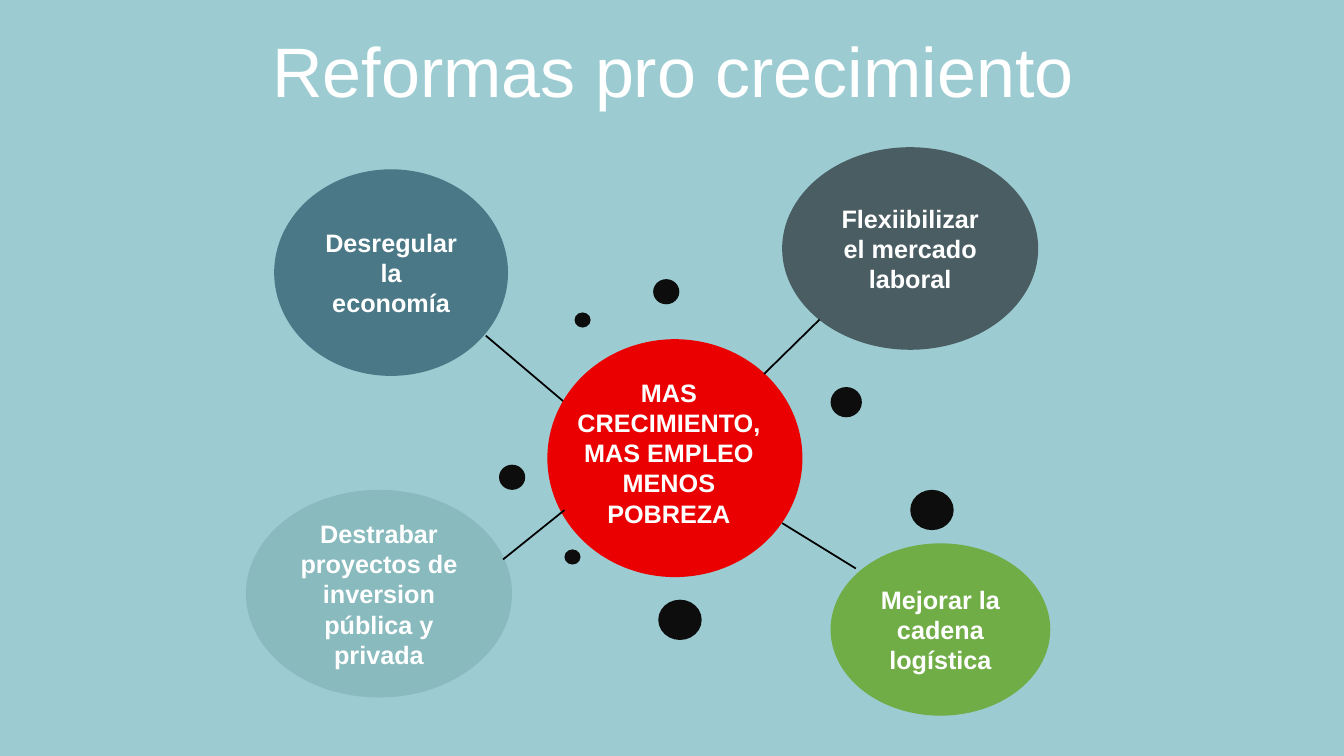
from dataclasses import dataclass
from typing import Optional

import pptx
import pptx.dml.color
import pptx.enum.shapes
import pptx.enum.text
import pptx.oxml
import pptx.util

SLIDE_WIDTH = pptx.util.Inches(13.33)
SLIDE_HEIGHT = pptx.util.Inches(7.5)


@dataclass(frozen=True)
class Theme:
    background: str = "9CCCD2"
    text: str = "FFFFFF"
    hub: str = "EA0000"
    deregulation: str = "4A7886"
    labour: str = "4A5D62"
    projects: str = "88BABE"
    logistics: str = "70AD47"
    dot: str = "0D0D0D"
    spoke: str = "000000"
    font: str = "Arial"
    title_size: float = 50
    label_size: float = 18
    spoke_width: float = 1.25


THEME = Theme()


@dataclass(frozen=True)
class Box:
    """Left, top, width and height in percent of the slide's size."""
    left: float
    top: float
    width: float
    height: float


@dataclass(frozen=True)
class Bubble:
    box: Box
    color: str
    label: Optional[str] = None


@dataclass(frozen=True)
class Spoke:
    """Start and end points in percent of the slide's size."""
    x1: float
    y1: float
    x2: float
    y2: float


@dataclass(frozen=True)
class Dot:
    left: float
    top: float
    size: tuple[float, float]


TITLE_BOX = Box(2.63, 4.93, 94.95, 10.53)
HUB_TEXT_BOX = Box(41.78, 49.2, 15.98, 22)
HUB = Bubble(Box(40.73, 44.87, 18.98, 31.47), THEME.hub)
REFORMS = [
    Bubble(Box(58.2, 19.47, 19.05, 26.8), THEME.labour, "Flexiibilizar el mercado laboral"),
    Bubble(Box(61.8, 71.87, 16.35, 22.8), THEME.logistics, "Mejorar la cadena logística"),
    Bubble(Box(20.4, 22.4, 17.4, 27.33), THEME.deregulation, "Desregular la economía"),
    Bubble(Box(18.3, 64.8, 19.8, 27.47), THEME.projects,
           "Destrabar proyectos de inversion pública y privada"),
]
SPOKE_BEHIND_HUB = Spoke(36.15, 44.4, 42.53, 54)
FRONT_SPOKES = [
    Spoke(37.43, 74, 42, 67.47),
    Spoke(56.85, 49.47, 60.98, 42.27),
    Spoke(58.2, 69.2, 63.68, 75.2),
]
LARGE, MEDIUM, SMALL, TINY = (3.23, 5.33), (2.33, 4), (1.95, 3.33), (1.2, 2)
DOTS = [
    Dot(48.98, 79.33, LARGE),
    Dot(61.8, 51.2, MEDIUM),
    Dot(42.75, 41.33, TINY),
    Dot(37.13, 61.47, SMALL),
    Dot(67.73, 64.8, LARGE),
    Dot(48.6, 36.93, SMALL),
    Dot(42, 72.67, TINY),
]


def across(percent: float) -> int:
    return round(SLIDE_WIDTH * percent / 100)


def down(percent: float) -> int:
    return round(SLIDE_HEIGHT * percent / 100)


def place(box: Box) -> tuple[int, int, int, int]:
    return across(box.left), down(box.top), across(box.width), down(box.height)


def rgb(color: str) -> pptx.dml.color.RGBColor:
    return pptx.dml.color.RGBColor.from_string(color)


def write(frame, text: str, size: float, bold: bool, anchor):
    """Fill a text frame with one centred paragraph and return the paragraph."""
    frame.word_wrap = True
    frame.vertical_anchor = anchor
    paragraph = frame.paragraphs[0]
    paragraph.alignment = pptx.enum.text.PP_ALIGN.CENTER
    run = paragraph.add_run()
    run.text = text
    run.font.name = THEME.font
    run.font.size = pptx.util.Pt(size)
    run.font.bold = bold
    run.font.color.rgb = rgb(THEME.text)
    return paragraph


def draw_title(slide) -> None:
    title = slide.shapes.add_textbox(*place(TITLE_BOX))
    paragraph = write(title.text_frame, "Reformas pro crecimiento", THEME.title_size,
                      False, pptx.enum.text.MSO_ANCHOR.MIDDLE)
    paragraph.line_spacing = 0.8
    paragraph.space_before = pptx.util.Pt(10)


def draw_bubble(slide, bubble: Bubble) -> None:
    ellipse = slide.shapes.add_shape(pptx.enum.shapes.MSO_SHAPE.OVAL, *place(bubble.box))
    ellipse.shadow.inherit = False
    ellipse.fill.solid()
    ellipse.fill.fore_color.rgb = rgb(bubble.color)
    ellipse.line.fill.background()
    if bubble.label:
        write(ellipse.text_frame, bubble.label, THEME.label_size, True,
              pptx.enum.text.MSO_ANCHOR.MIDDLE)


def draw_spoke(slide, spoke: Spoke) -> None:
    line = slide.shapes.add_connector(
        pptx.enum.shapes.MSO_CONNECTOR.STRAIGHT,
        across(spoke.x1), down(spoke.y1), across(spoke.x2), down(spoke.y2))
    line.line.color.rgb = rgb(THEME.spoke)
    line.line.width = pptx.util.Pt(THEME.spoke_width)
    properties = line.element.spPr
    properties.append(pptx.oxml.parse_xml(
        '<a:effectLst xmlns:a="http://schemas.openxmlformats.org/drawingml/2006/main"/>'))


def draw_hub_text(slide) -> None:
    hub_text = slide.shapes.add_textbox(*place(HUB_TEXT_BOX))
    write(hub_text.text_frame, "MAS CRECIMIENTO, MAS EMPLEO MENOS POBREZA",
          THEME.label_size, True, pptx.enum.text.MSO_ANCHOR.TOP)
    hub_text.text_frame.auto_size = pptx.enum.text.MSO_AUTO_SIZE.SHAPE_TO_FIT_TEXT


def main() -> None:
    deck = pptx.Presentation()
    deck.slide_width, deck.slide_height = SLIDE_WIDTH, SLIDE_HEIGHT
    slide = deck.slides.add_slide(deck.slide_layouts[6])
    slide.background.fill.solid()
    slide.background.fill.fore_color.rgb = rgb(THEME.background)

    draw_title(slide)
    draw_spoke(slide, SPOKE_BEHIND_HUB)
    for bubble in [HUB, *REFORMS]:
        draw_bubble(slide, bubble)
    for spoke in FRONT_SPOKES:
        draw_spoke(slide, spoke)
    for dot in DOTS:
        draw_bubble(slide, Bubble(Box(dot.left, dot.top, *dot.size), THEME.dot))
    draw_hub_text(slide)
    deck.save("out.pptx")


if __name__ == "__main__":
    main()
